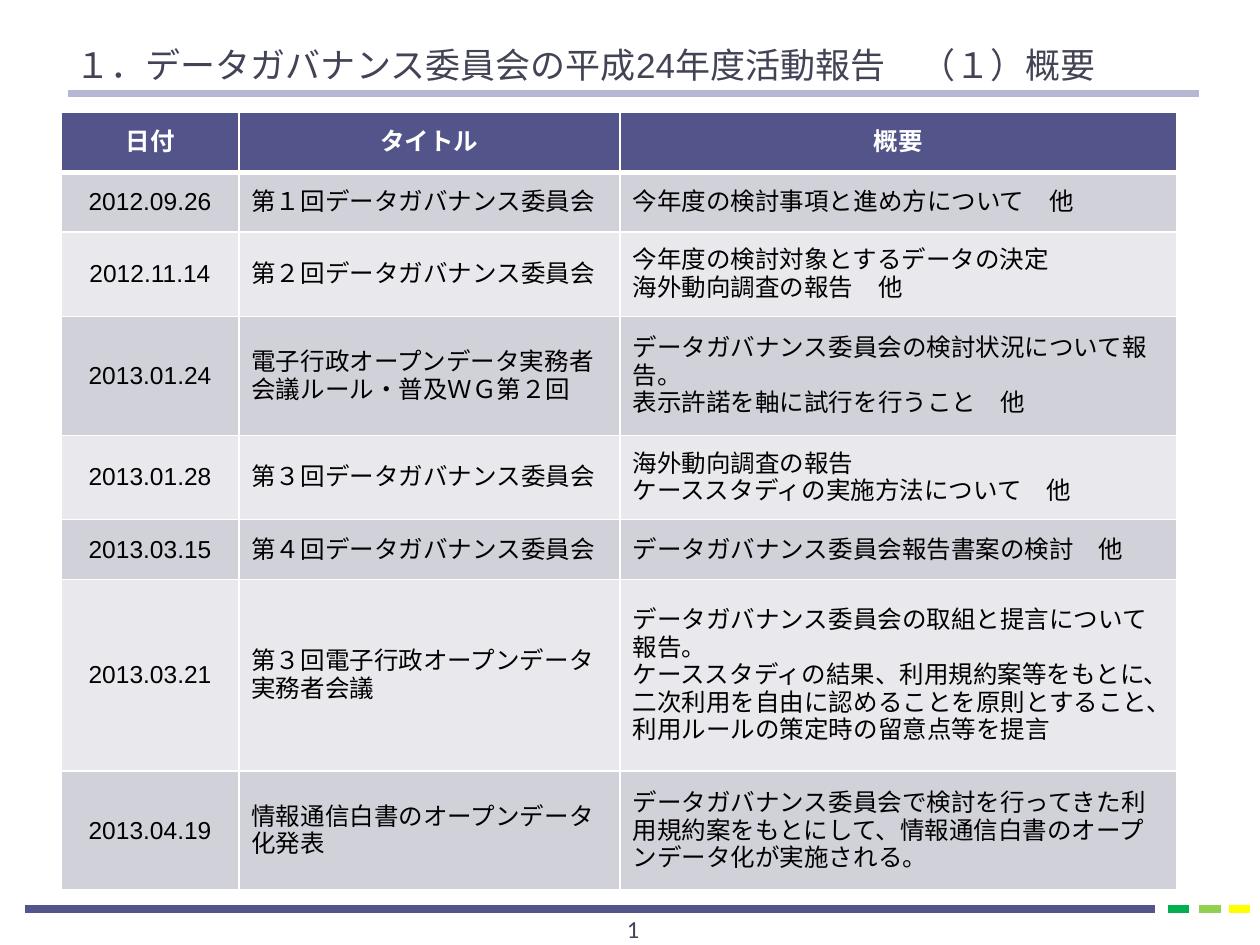
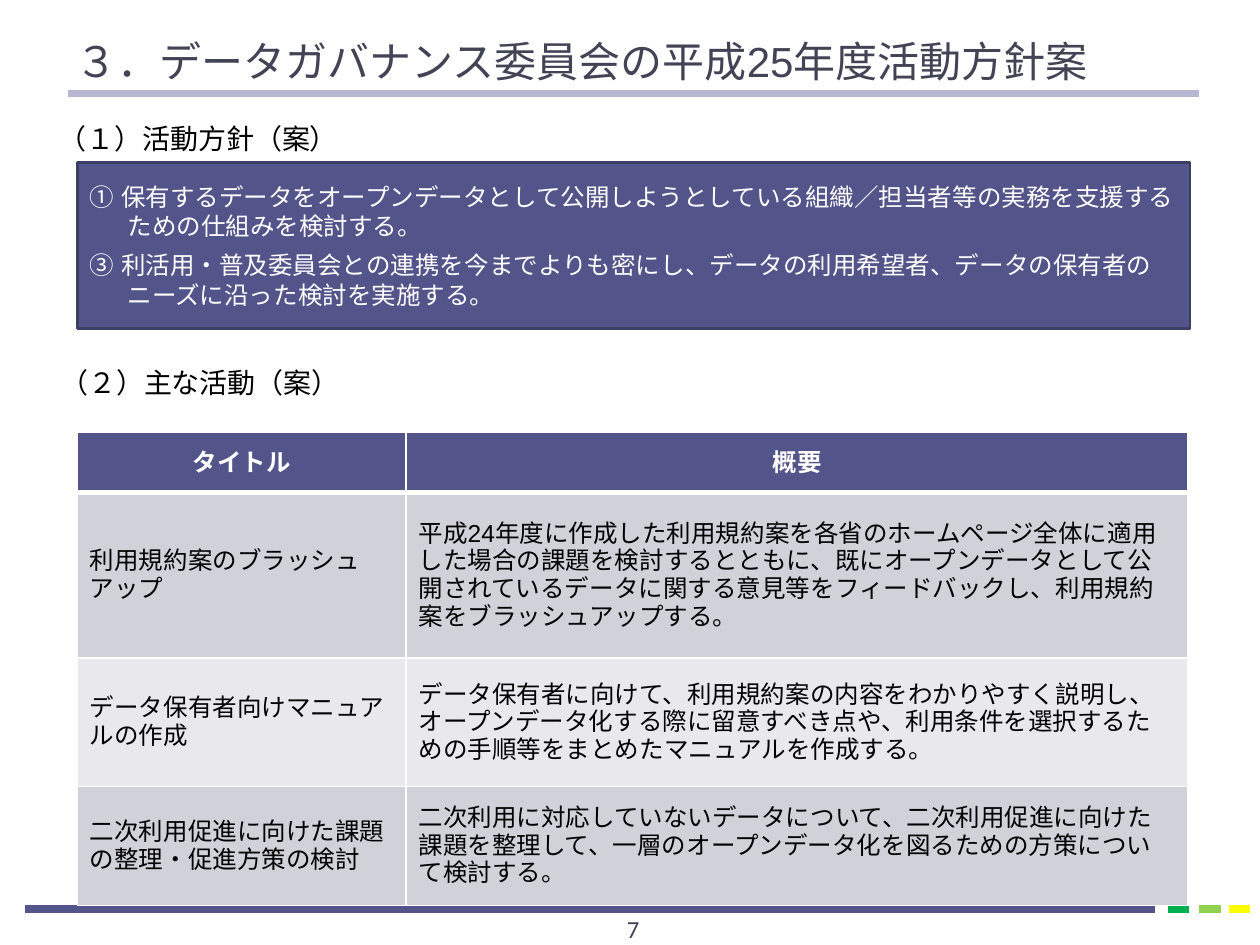
import pptx
import pptx.util
import pptx.dml.color
import pptx.enum.shapes
import pptx.enum.text
import pptx.oxml
import pptx.oxml.ns
from lxml import etree

Pt = pptx.util.Pt
qn = pptx.oxml.ns.qn
ALIGN = pptx.enum.text.PP_ALIGN
ANCHOR = pptx.enum.text.MSO_ANCHOR

COLORS = {
    "indigo": "53548A", "edge": "3D3E66", "lavender": "B7B7D4", "slate": "424456",
    "band1": "D1D1DA", "band2": "E9E9ED", "white": "FFFFFF", "black": "000000",
    "green": "00B050", "lime": "92D050", "yellow": "FFFF00",
}
LATIN, NUMBER, JAPANESE = "Arial", "Calibri", "Noto Sans CJK JP"

# Footer segments: start, end, colour
FOOTER = [(14.4, 660.2, "indigo"), (667.4, 679.7, "green"),
          (685.4, 697.7, "lime"), (702, 714.2, "yellow")]

MEETINGS = [
    ["日付", "タイトル", "概要"],
    ["2012.09.26", "第１回データガバナンス委員会", "今年度の検討事項と進め方について　他"],
    ["2012.11.14", "第２回データガバナンス委員会",
     "今年度の検討対象とするデータの決定\n海外動向調査の報告　他"],
    ["2013.01.24", "電子行政オープンデータ実務者会議ルール・普及ＷＧ第２回",
     "データガバナンス委員会の検討状況について報告。\n表示許諾を軸に試行を行うこと　他"],
    ["2013.01.28", "第３回データガバナンス委員会",
     "海外動向調査の報告\nケーススタディの実施方法について　他"],
    ["2013.03.15", "第４回データガバナンス委員会", "データガバナンス委員会報告書案の検討　他"],
    ["2013.03.21", "第３回電子行政オープンデータ実務者会議",
     "データガバナンス委員会の取組と提言について報告。\n"
     "ケーススタディの結果、利用規約案等をもとに、二次利用を自由に認めることを原則とすること、"
     "利用ルールの策定時の留意点等を提言"],
    ["2013.04.19", "情報通信白書のオープンデータ化発表",
     "データガバナンス委員会で検討を行ってきた利用規約案をもとにして、"
     "情報通信白書のオープンデータ化が実施される。"],
]

ACTIVITIES = [
    ["タイトル", "概要"],
    ["利用規約案のブラッシュアップ",
     "平成24年度に作成した利用規約案を各省のホームページ全体に適用した場合の課題を検討するとともに、"
     "既にオープンデータとして公開されているデータに関する意見等をフィードバックし、"
     "利用規約案をブラッシュアップする。"],
    ["データ保有者向けマニュアルの作成",
     "データ保有者に向けて、利用規約案の内容をわかりやすく説明し、"
     "オープンデータ化する際に留意すべき点や、利用条件を選択するための手順等をまとめたマニュアルを作成する。"],
    ["二次利用促進に向けた課題の整理・促進方策の検討",
     "二次利用に対応していないデータについて、二次利用促進に向けた課題を整理して、"
     "一層のオープンデータ化を図るための方策について検討する。"],
]

POLICIES = [
    "① 保有するデータをオープンデータとして公開しようとしている組織／担当者等の実務を支援するための仕組みを検討する。",
    "③ 利活用・普及委員会との連携を今までよりも密にし、データの利用希望者、データの保有者のニーズに沿った検討を実施する。",
]


def rgb(color):
    return pptx.dml.color.RGBColor.from_string(COLORS[color])


def write(tf, text, size, color, font=LATIN, bold=False, align=ALIGN.LEFT):
    tf.text = text
    for p in tf.paragraphs:
        p.alignment = align
        for r in p.runs:
            r.font.size, r.font.name, r.font.bold = Pt(size), font, bold
            r.font.color.rgb = rgb(color)
            ea = etree.SubElement(r.font._element, qn("a:ea"))
            ea.set("typeface", font)


def add_line(s, x1, x2, y, color, width):
    line = s.shapes.add_connector(pptx.enum.shapes.MSO_CONNECTOR.STRAIGHT,
                                  Pt(x1), Pt(y), Pt(x2), Pt(y))
    line.line.color.rgb = rgb(color)
    line.line.width = Pt(width)
    etree.SubElement(line._element.spPr, qn("a:effectLst"))


def add_textbox(s, x, y, w, h, text, size, color, wrap=True, **style):
    sp = s.shapes.add_textbox(Pt(x), Pt(y), Pt(w), Pt(h))
    sp.text_frame.word_wrap = wrap
    write(sp.text_frame, text, size, color, **style)


def add_section_label(s, x, y, text):
    add_textbox(s, x, y, 176.4, 26.6, text, 16, "black", wrap=False, font=JAPANESE)


def add_policy_box(s, x, y, w, h, items):
    sp = s.shapes.add_shape(pptx.enum.shapes.MSO_SHAPE.RECTANGLE,
                            Pt(x), Pt(y), Pt(w), Pt(h))
    sp.shadow.inherit = False
    sp.fill.solid()
    sp.fill.fore_color.rgb = rgb("indigo")
    sp.line.color.rgb = rgb("edge")
    sp.line.width = Pt(1.5)
    tf = sp.text_frame
    tf.word_wrap = True
    tf.vertical_anchor = ANCHOR.MIDDLE
    write(tf, "\n".join(items), 14, "white")
    for p in tf.paragraphs:
        p.line_spacing = Pt(16.6)
        p.space_after = Pt(6)
        pPr = p._p.get_or_add_pPr()
        pPr.set("marL", str(Pt(21.6)))
        pPr.set("indent", str(-Pt(21.6)))


def set_borders(cell, top, bottom):
    tcPr = cell._tc.get_or_add_tcPr()
    for side, width in (("L", 1), ("R", 1), ("T", top), ("B", bottom)):
        ln = etree.SubElement(tcPr, qn("a:ln" + side), w=str(Pt(width)))
        fill = etree.SubElement(ln, qn("a:solidFill"))
        etree.SubElement(fill, qn("a:srgbClr"), val=COLORS["white"])


def add_banded_table(s, x, y, widths, heights, rows, centred=()):
    table = s.shapes.add_table(len(rows), len(widths), Pt(x), Pt(y),
                               Pt(sum(widths)), Pt(sum(heights))).table
    for column, width in zip(table.columns, widths):
        column.width = Pt(width)
    for i, (row, height) in enumerate(zip(rows, heights)):
        table.rows[i].height = Pt(height)
        header = i == 0
        band = "indigo" if header else "band1" if i % 2 else "band2"
        for j, text in enumerate(row):
            cell = table.cell(i, j)
            set_borders(cell, 3 if i == 1 else 1, 3 if header else 1)
            cell.fill.solid()
            cell.fill.fore_color.rgb = rgb(band)
            cell.vertical_anchor = ANCHOR.MIDDLE
            write(cell.text_frame, text, 14, "white" if header else "black", bold=header,
                  align=ALIGN.CENTER if header or j in centred else ALIGN.LEFT)


def add_slide(prs, title, size, number):
    s = prs.slides.add_slide(prs.slide_layouts[5])
    # Footer band and title rule
    for x1, x2, color in FOOTER:
        add_line(s, x1, x2, 519.6, color, 4.5)
    add_line(s, 38.9, 685.4, 53.3, "lavender", 4.25)
    # Title
    sp = s.shapes.title
    sp.left, sp.top, sp.width, sp.height = Pt(36), Pt(0.7), Pt(648), Pt(51.8)
    tf = sp.text_frame
    tf.auto_size = pptx.enum.text.MSO_AUTO_SIZE.NONE
    tf.vertical_anchor = ANCHOR.BOTTOM
    write(tf, title, size, "slate")
    # Page number
    add_textbox(s, 283.7, 518.8, 156.2, 28.8, number, 14, "slate",
                font=NUMBER, align=ALIGN.CENTER)
    return s


def main():
    prs = pptx.Presentation()
    prs.slide_width, prs.slide_height = Pt(720), Pt(540)

    # Activity report
    s = add_slide(prs, "１．データガバナンス委員会の平成24年度活動報告　（１）概要", 20, "1")
    add_banded_table(s, 35, 64.4, [101.5, 217.8, 318.2],
                     [34, 34.2, 48.2, 68, 48.2, 34.2, 109.4, 68.2], MEETINGS, centred=(0,))

    # Activity plan
    s = add_slide(prs, "３．データガバナンス委員会の平成25年度活動方針案", 24, "7")
    add_banded_table(s, 44.2, 247.2, [187.8, 447], [34.2, 94.6, 73.4, 68], ACTIVITIES)
    add_policy_box(s, 44.2, 92.8, 635.8, 95, POLICIES)
    add_section_label(s, 26.6, 66.2, "（１）活動方針（案）")
    add_section_label(s, 27.4, 205.2, "（２）主な活動（案）")

    prs.save("out.pptx")


if __name__ == "__main__":
    main()
